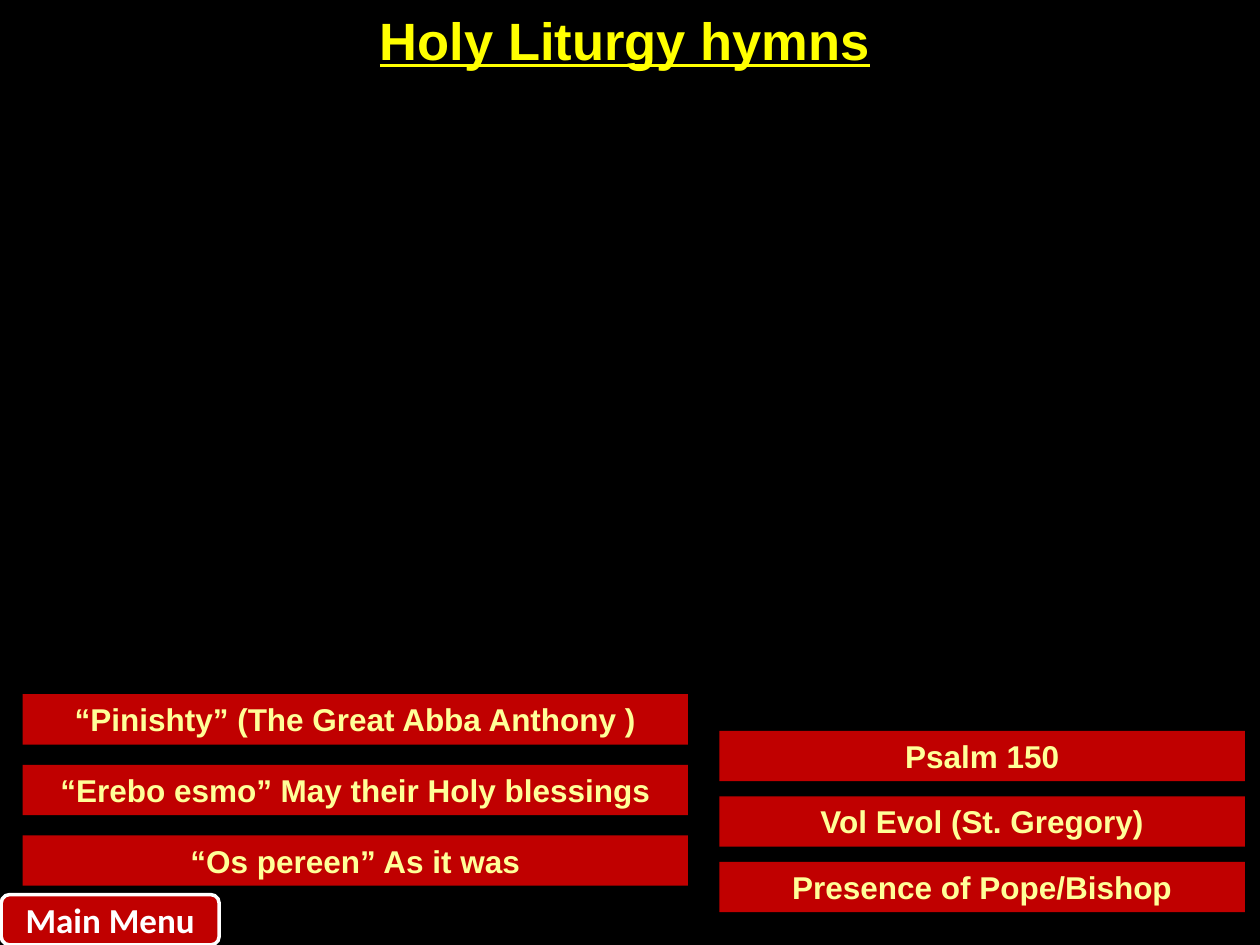
from dataclasses import dataclass

from pptx import Presentation
from pptx import util as u
from pptx.dml.color import RGBColor
from pptx.enum import shapes, text

BLACK = RGBColor(0x00, 0x00, 0x00)
WHITE = RGBColor(0xFF, 0xFF, 0xFF)
RED = RGBColor(0xC0, 0x00, 0x00)
YELLOW = RGBColor(0xFF, 0xFF, 0x00)
PALE_YELLOW = RGBColor(0xFF, 0xFF, 0x99)

NO_STYLE_NO_GRID = "{2D5ABB26-0587-4C30-8999-92F81FD0307C}"
BUTTON_HEIGHT = 0.4


@dataclass(frozen=True)
class HymnColumn:
    """A stack of hymn buttons; lengths in inches, pitch from top to top."""
    left: float
    top: float
    width: float
    pitch: float
    hymns: tuple[str, ...]


HYMN_COLUMNS = (
    HymnColumn(0.18, 5.51, 5.28, 0.56, (
        "“Pinishty” (The Great Abba Anthony )",
        "“Erebo esmo” May their Holy blessings",
        "“Os pereen” As it was",
    )),
    HymnColumn(5.71, 5.8, 4.17, 0.52, (
        "Psalm 150",
        "Vol Evol (St. Gregory)",
        "Presence of Pope/Bishop",
    )),
)


def write(frame, words: str, *, size: float, color: RGBColor,
          font: str = "Arial", underline: bool = False) -> None:
    paragraph = frame.paragraphs[0]
    paragraph.alignment = text.PP_ALIGN.CENTER
    run = paragraph.add_run()
    run.text = words
    run.font.name = font
    run.font.size = u.Pt(size)
    run.font.bold = True
    if underline:
        run.font.underline = True
    run.font.color.rgb = color


def add_heading(slide, words: str) -> None:
    """Add the heading as a one-cell table without fill or borders."""
    table = slide.shapes.add_table(
        1, 1, u.Inches(0.35), u.Inches(0.05), u.Inches(9.22), u.Inches(0.87)).table
    table.first_row = table.horz_banding = False
    table._tbl.tblPr[0].text = NO_STYLE_NO_GRID
    cell = table.cell(0, 0)
    cell.fill.background()
    write(cell.text_frame, words, size=30, color=YELLOW, underline=True)


def add_button(slide, kind: shapes.MSO_SHAPE, left: float, top: float, width: float):
    button = slide.shapes.add_shape(
        kind, u.Inches(left), u.Inches(top), u.Inches(width), u.Inches(BUTTON_HEIGHT))
    button.shadow.inherit = False
    button.fill.solid()
    button.fill.fore_color.rgb = RED
    button.line.fill.background()
    return button


def add_hymns(slide, column: HymnColumn) -> None:
    for row, hymn in enumerate(column.hymns):
        button = add_button(slide, shapes.MSO_SHAPE.RECTANGLE, column.left,
                            column.top + row * column.pitch, column.width)
        frame = button.text_frame
        frame.word_wrap = True
        frame.auto_size = text.MSO_AUTO_SIZE.SHAPE_TO_FIT_TEXT
        frame.vertical_anchor = text.MSO_ANCHOR.TOP
        write(frame, hymn, size=18, color=PALE_YELLOW)


def add_menu_button(slide) -> None:
    button = add_button(slide, shapes.MSO_SHAPE.ROUNDED_RECTANGLE, 0.01, 7.1, 1.73)
    button.line.color.rgb = WHITE
    button.line.width = u.Pt(2)
    button.text_frame.vertical_anchor = text.MSO_ANCHOR.MIDDLE
    write(button.text_frame, "Main Menu", size=20, color=WHITE, font="Calibri")


def main() -> None:
    deck = Presentation()
    deck.slide_width, deck.slide_height = u.Inches(10), u.Inches(7.5)
    slide = deck.slides.add_slide(deck.slide_layouts.get_by_name("Blank"))
    slide.background.fill.solid()
    slide.background.fill.fore_color.rgb = BLACK
    add_heading(slide, "Holy Liturgy hymns")
    for column in HYMN_COLUMNS:
        add_hymns(slide, column)
    add_menu_button(slide)
    deck.save("out.pptx")


if __name__ == "__main__":
    main()
